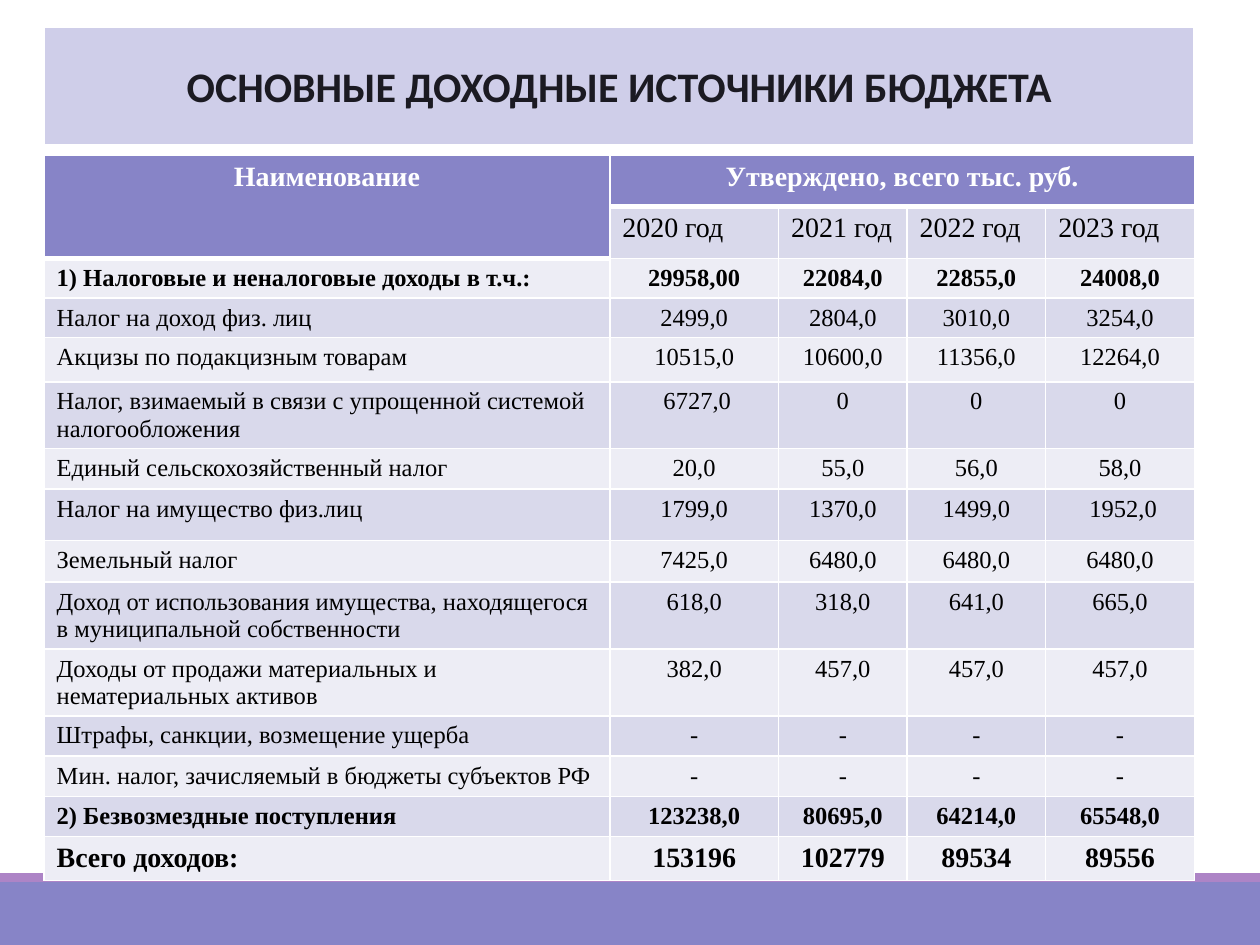
from lxml.etree import SubElement
from pptx import Presentation
from pptx.dml.color import RGBColor
from pptx.enum.shapes import MSO_SHAPE
from pptx.enum.text import MSO_ANCHOR, PP_ALIGN
from pptx.oxml.ns import qn
from pptx.util import Inches, Pt

WHITE = RGBColor(0xFF, 0xFF, 0xFF)
BLACK = RGBColor(0, 0, 0)
INK = RGBColor(0x1B, 0x1A, 0x22)
VIOLET = RGBColor(0x87, 0x84, 0xC7)
MAUVE = RGBColor(0xAD, 0x84, 0xC6)
LAVENDER = RGBColor(0xCF, 0xCE, 0xE9)
DARK_BAND = RGBColor(0xD9, 0xD9, 0xEB)
LIGHT_BAND = RGBColor(0xED, 0xED, 0xF5)

COLUMN_WIDTHS = [4.49, 1.34, 1.02, 1.1, 1.18]
ROW_HEIGHTS = [0.41, 0.41, 0.31, 0.31, 0.35, 0.53, 0.32, 0.41,
               0.33, 0.53, 0.53, 0.32, 0.32, 0.32, 0.35]
ROWS = [
    ["Наименование", "Утверждено, всего тыс. руб.", "", "", ""],
    ["", "2020 год", "2021 год", "2022 год", "2023 год"],
    ["1) Налоговые и неналоговые доходы в т.ч.:", "29958,00", "22084,0", "22855,0", "24008,0"],
    ["Налог на доход физ. лиц", "2499,0", "2804,0", "3010,0", "3254,0"],
    ["Акцизы по подакцизным товарам", "10515,0", "10600,0", "11356,0", "12264,0"],
    ["Налог, взимаемый в связи с упрощенной системой налогообложения", " 6727,0", "0", "0", "0"],
    ["Единый сельскохозяйственный налог", "20,0", "55,0", "56,0", "58,0"],
    ["Налог на имущество физ.лиц", "1799,0", "1370,0", "1499,0", " 1952,0"],
    ["Земельный налог", "7425,0", "6480,0", "6480,0", "6480,0"],
    ["Доход от использования имущества, находящегося в муниципальной собственности",
     "618,0", "318,0", "641,0", "665,0"],
    ["Доходы от продажи материальных и нематериальных активов",
     "382,0", "457,0", "457,0", "457,0"],
    ["Штрафы, санкции, возмещение ущерба", "-", "-", "-", "-"],
    ["Мин. налог, зачисляемый в бюджеты субъектов РФ", "-", "-", "-", "-"],
    ["2) Безвозмездные поступления", "123238,0", "80695,0", "64214,0", "65548,0"],
    ["Всего доходов:", "153196", "102779", "89534", "89556"],
]
YEAR_ROW = 1
TOTAL_ROW = len(ROWS) - 1
BOLD_ROWS = {0, 2, TOTAL_ROW - 1, TOTAL_ROW}
LARGE_ROWS = {0, YEAR_ROW, TOTAL_ROW}


def style_text(text_frame, size, font_name, color, bold, alignment):
    """Format every run of a text frame alike."""
    for para in text_frame.paragraphs:
        para.alignment = alignment
        for span in para.runs:
            span.font.size = Pt(size)
            span.font.name = font_name
            span.font.color.rgb = color
            span.font.bold = bold


def place(shape, box):
    """Move a shape to a box of left, top, width and height."""
    shape.left, shape.top, shape.width, shape.height = map(Inches, box)


def add_footer(page, box):
    """Draw the violet footer with a thin mauve strip along its top."""
    left, top, width, height = box
    strip = 0.07
    for color, band_top, band_height in ((VIOLET, top + strip, height - strip),
                                         (MAUVE, top, strip)):
        band = page.shapes.add_shape(
            MSO_SHAPE.RECTANGLE, Inches(left), Inches(band_top),
            Inches(width), Inches(band_height))
        band.shadow.inherit = False
        band.fill.solid()
        band.fill.fore_color.rgb = color
        band.line.fill.background()


def add_heading(page, box):
    """Turn the title placeholder into a rounded panel with centred text."""
    title = page.shapes.title
    place(title, box)
    geometry = SubElement(title._element.spPr, qn("a:prstGeom"), prst="roundRect")
    SubElement(geometry, qn("a:avLst"))
    title.fill.solid()
    title.fill.fore_color.rgb = LAVENDER
    title.line.color.rgb = WHITE
    title.line.width = Pt(1.25)
    title.text_frame.text = "ОСНОВНЫЕ ДОХОДНЫЕ ИСТОЧНИКИ БЮДЖЕТА"
    title.text_frame.vertical_anchor = MSO_ANCHOR.MIDDLE
    style_text(title.text_frame, 24, "Calibri", INK, True, PP_ALIGN.CENTER)


def set_borders(cell, top, bottom):
    """Give a cell white borders, with its own top and bottom widths."""
    properties = cell._tc.get_or_add_tcPr()
    for side, width in (("L", 1), ("R", 1), ("T", top), ("B", bottom)):
        line = SubElement(properties, qn(f"a:ln{side}"), w=str(Pt(width)))
        fill = SubElement(line, qn("a:solidFill"))
        SubElement(fill, qn("a:srgbClr"), val=str(WHITE))


def format_cell(cell, row, column):
    """Apply the borders, fill and text style that a cell's position calls for."""
    header = row == 0 or (row == YEAR_ROW and column == 0)
    below_header = row == YEAR_ROW or (row == YEAR_ROW + 1 and column == 0)
    set_borders(cell, 3 if below_header else 1, 3 if header else 1)
    cell.fill.solid()
    band = DARK_BAND if row % 2 else LIGHT_BAND
    cell.fill.fore_color.rgb = VIOLET if header else band
    centred = row == 0 or (column > 0 and row != YEAR_ROW)
    style_text(cell.text_frame, 16 if row in LARGE_ROWS else 14, "Times New Roman",
               WHITE if header else BLACK, row in BOLD_ROWS,
               PP_ALIGN.CENTER if centred else PP_ALIGN.LEFT)


def add_income_table(page, box):
    """Add the income table with its two-row header."""
    frame = page.shapes.add_table(len(ROWS), len(COLUMN_WIDTHS), *map(Inches, box))
    table = frame.table
    for column, width in zip(table.columns, COLUMN_WIDTHS):
        column.width = Inches(width)
    for row, height in zip(table.rows, ROW_HEIGHTS):
        row.height = Inches(height)
    for row, texts in enumerate(ROWS):
        for column, text in enumerate(texts):
            cell = table.cell(row, column)
            cell.text_frame.text = text
            format_cell(cell, row, column)
    table.cell(0, 0).merge(table.cell(YEAR_ROW, 0))
    table.cell(0, 1).merge(table.cell(0, len(COLUMN_WIDTHS) - 1))


def main():
    """Build the slide and save the deck."""
    deck = Presentation()
    deck.slide_width, deck.slide_height = Inches(10), Inches(7.5)
    page = deck.slides.add_slide(deck.slide_layouts.get_by_name("Title Only"))
    add_footer(page, (0, 6.93, 10, 0.57))
    add_heading(page, (0.35, 0.21, 9.13, 0.94))
    add_income_table(page, (0.35, 1.23, sum(COLUMN_WIDTHS), sum(ROW_HEIGHTS)))
    deck.save("out.pptx")


if __name__ == "__main__":
    main()
